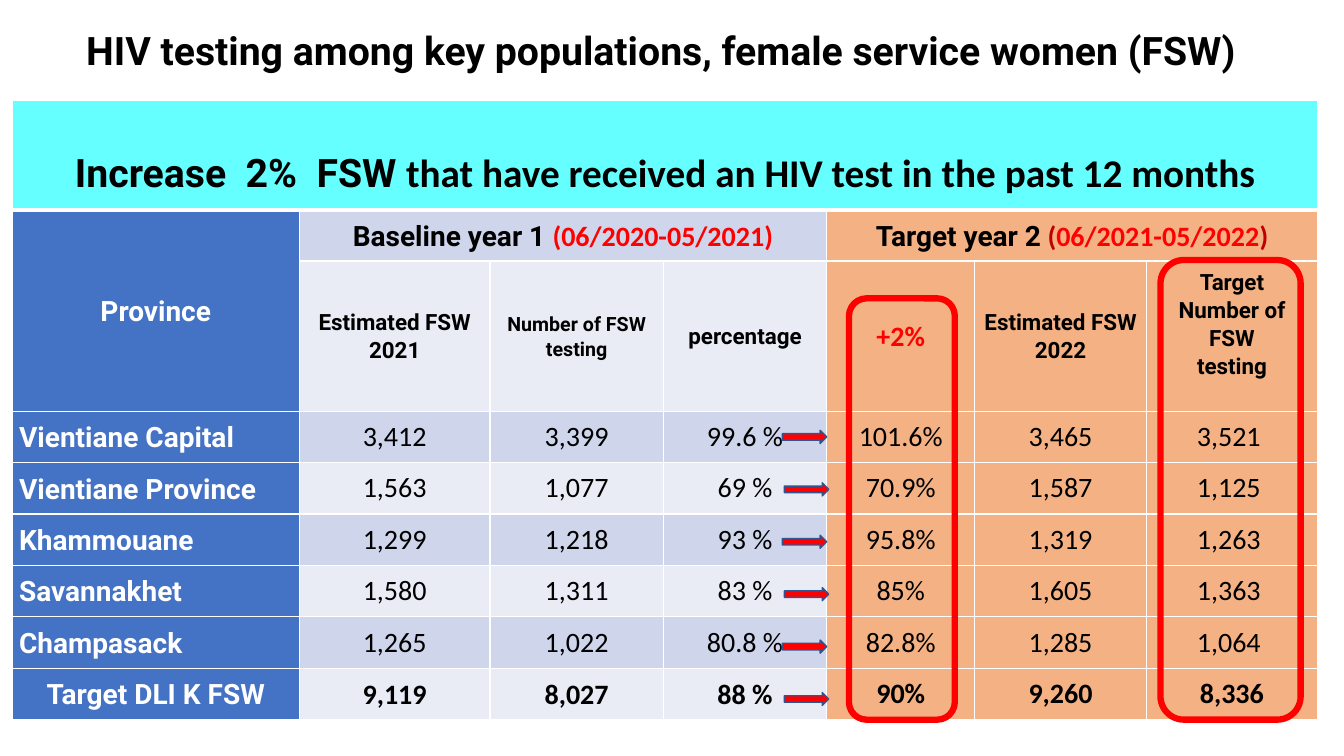
from lxml.etree import SubElement
from pptx import Presentation
from pptx.dml.color import RGBColor
from pptx.enum.shapes import MSO_SHAPE as Shape
from pptx.enum.text import MSO_ANCHOR as Anchor, PP_ALIGN as Align
from pptx.oxml.ns import qn
from pptx.util import Inches, Pt

BLACK, WHITE, RED, DARK_RED = "000000", "FFFFFF", "FF0000", "C00000"
BLUE, AQUA, ORANGE, OUTLINE = "4472C4", "66FFFF", "F4B183", "325491"
BANDS = ("E9EBF5", "CFD5EA")
HEADING_FONT, NUMBER_FONT = "Roboto", "Calibri"

COLUMN_WIDTHS = [2.85, 1.89, 1.72, 1.62, 1.47, 1.7, 1.7]
ROW_HEIGHTS = [1.08, 0.51, 1.49] + [0.51] * 6
COLUMN_HEADINGS = [
    (["Estimated FSW 2021"], {}),
    (["Number of FSW", "testing"], {"size": 14}),
    (["percentage"], {}),
    (["+2%"], {"size": 20, "font": NUMBER_FONT, "color": RED}),
    (["Estimated FSW 2022"], {}),
    (["Target", "Number of FSW", "testing"], {"margins": (0.08, 0, 0.08, 0.24)}),
]
PROVINCES = [
    ("Vientiane Capital", "3,412", "3,399", "99.6 %", "101.6%", "3,465", "3,521 "),
    ("Vientiane Province", "1,563", "1,077", "69 %", "70.9%", "1,587", "1,125 "),
    ("Khammouane", "1,299", "1,218", "93 %", "95.8%", "1,319", "1,263 "),
    ("Savannakhet", "1,580", "1,311", "83 %", "85%", "1,605", "1,363 "),
    ("Champasack", "1,265", "1,022", "80.8 %", "82.8%", "1,285", "1,064 "),
    ("Target DLI K FSW", "9,119", "8,027", "88 %", "90%", "9,260", "8,336"),
]


def rgb(value):
    return RGBColor.from_string(value)


def write(frame, paragraphs, size=20, font=HEADING_FONT, color=BLACK, bold=True,
          align=Align.CENTER, spacing=1.07):
    """Each paragraph is a string or a list of (text, own format) runs."""
    frame.word_wrap = True
    for index, content in enumerate(paragraphs):
        paragraph = frame.paragraphs[0] if index == 0 else frame.add_paragraph()
        paragraph.alignment = align
        paragraph.line_spacing = spacing
        runs = [(content, {})] if isinstance(content, str) else content
        for text, own in runs:
            run = paragraph.add_run()
            run.text = text
            run.font.size = Pt(size)
            run.font.bold = bold
            run.font.name = own.get("font", font)
            run.font.color.rgb = rgb(own.get("color", color))


class SlideBuilder:
    def __init__(self, slide):
        self.slide = slide

    def text(self, left, top, width, height, paragraphs, **style):
        box = self.slide.shapes.add_textbox(
            Inches(left), Inches(top), Inches(width), Inches(height))
        box.text_frame.vertical_anchor = Anchor.MIDDLE
        write(box.text_frame, paragraphs, **style)

    def shape(self, kind, left, top, width, height, line, line_width, fill=None):
        shape = self.slide.shapes.add_shape(
            kind, Inches(left), Inches(top), Inches(width), Inches(height))
        shape.shadow.inherit = False
        shape.line.color.rgb = rgb(line)
        shape.line.width = Pt(line_width)
        if fill:
            shape.fill.solid()
            shape.fill.fore_color.rgb = rgb(fill)
        else:
            shape.fill.background()

    def table(self, left, top, widths, heights):
        table = self.slide.shapes.add_table(
            len(heights), len(widths), Inches(left), Inches(top),
            Inches(sum(widths)), Inches(sum(heights))).table
        table.first_row = table.horz_banding = False
        for column, width in zip(table.columns, widths):
            column.width = Inches(width)
        for row, height in zip(table.rows, heights):
            row.height = Inches(height)
        for cell in table.iter_cells():
            self.borders(cell)
        return table

    def borders(self, cell, bottom=1):
        properties = cell._tc.get_or_add_tcPr()
        for side, width in (("L", 1), ("R", 1), ("T", 1), ("B", bottom)):
            for old in properties.findall(qn("a:ln" + side)):
                properties.remove(old)
            line = SubElement(properties, qn("a:ln" + side), w=str(Pt(width)))
            fill = SubElement(line, qn("a:solidFill"))
            SubElement(fill, qn("a:srgbClr"), val=WHITE)

    def cell(self, cell, paragraphs, fill, margins=(0.07, 0, 0.07, 0), **style):
        cell.fill.solid()
        cell.fill.fore_color.rgb = rgb(fill)
        cell.vertical_anchor = Anchor.MIDDLE
        (cell.margin_left, cell.margin_top,
         cell.margin_right, cell.margin_bottom) = map(Inches, margins)
        write(cell.text_frame, paragraphs, **style)


def main():
    presentation = Presentation()
    presentation.slide_width = Inches(13.33)
    presentation.slide_height = Inches(7.5)
    builder = SlideBuilder(presentation.slides.add_slide(presentation.slide_layouts[6]))

    # Title
    builder.text(0.66, -0.07, 12.21, 1.19,
                 [" HIV testing among key populations, female service women (FSW)"],
                 size=28, align=Align.LEFT, spacing=0.9)

    # Table with its banner and group headings
    table = builder.table(0.12, 1, COLUMN_WIDTHS, ROW_HEIGHTS)
    for column in range(len(COLUMN_WIDTHS)):
        builder.borders(table.cell(0, column), bottom=3)
    for first, last in (((0, 0), (0, 6)), ((1, 0), (2, 0)),
                        ((1, 1), (1, 3)), ((1, 4), (1, 6))):
        table.cell(*first).merge(table.cell(*last))
    builder.cell(table.cell(0, 0), [[
        ("Increase  2%  FSW ", {}),
        ("that have received an HIV test in the past 12 months", {"font": NUMBER_FONT}),
    ]], AQUA, margins=(0.07, 0.35, 0.07, 0), size=28)
    builder.cell(table.cell(1, 0), ["Province"], BLUE, color=WHITE)
    builder.cell(table.cell(1, 1), [[
        ("Baseline year 1 ", {}),
        ("(06/2020-05/2021)", {"font": NUMBER_FONT, "color": RED}),
    ]], BANDS[1])
    builder.cell(table.cell(1, 4), [[
        ("Target year 2", {}),
        (" (", {"font": NUMBER_FONT, "color": DARK_RED}),
        ("06/2021-05/2022", {"font": NUMBER_FONT, "color": RED}),
        (")", {"font": NUMBER_FONT, "color": DARK_RED}),
    ]], ORANGE)

    # Column headings
    for column, (lines, own) in enumerate(COLUMN_HEADINGS, start=1):
        builder.cell(table.cell(2, column), lines, BANDS[0] if column < 4 else ORANGE,
                     **{"size": 16, **own})

    # Province rows, closed by the bold total
    for row, (province, *values) in enumerate(PROVINCES, start=3):
        is_total = row == len(ROW_HEIGHTS) - 1
        builder.cell(table.cell(row, 0), [province], BLUE, color=WHITE,
                     align=Align.CENTER if is_total else Align.LEFT)
        for column, value in enumerate(values, start=1):
            builder.cell(table.cell(row, column), [value],
                         BANDS[row % 2] if column < 4 else ORANGE,
                         margins=(0, 0, 0, 0), font=NUMBER_FONT, bold=is_total,
                         spacing=1.07 if is_total and column < 4 else 1)

    # Red frames around the target columns
    builder.shape(Shape.ROUNDED_RECTANGLE, 8.42, 2.96, 1.05, 4.18, RED, 4.5)
    builder.shape(Shape.ROUNDED_RECTANGLE, 11.51, 2.58, 1.39, 4.56, RED, 4.5)

    # Arrows from percentage to target
    for index in range(len(PROVINCES)):
        builder.shape(Shape.RIGHT_ARROW, 7.76 + 0.02 * (index % 2), 4.27 + 0.52 * index,
                      0.44, 0.13, OUTLINE, 1, fill=RED)

    presentation.save("out.pptx")


if __name__ == "__main__":
    main()
